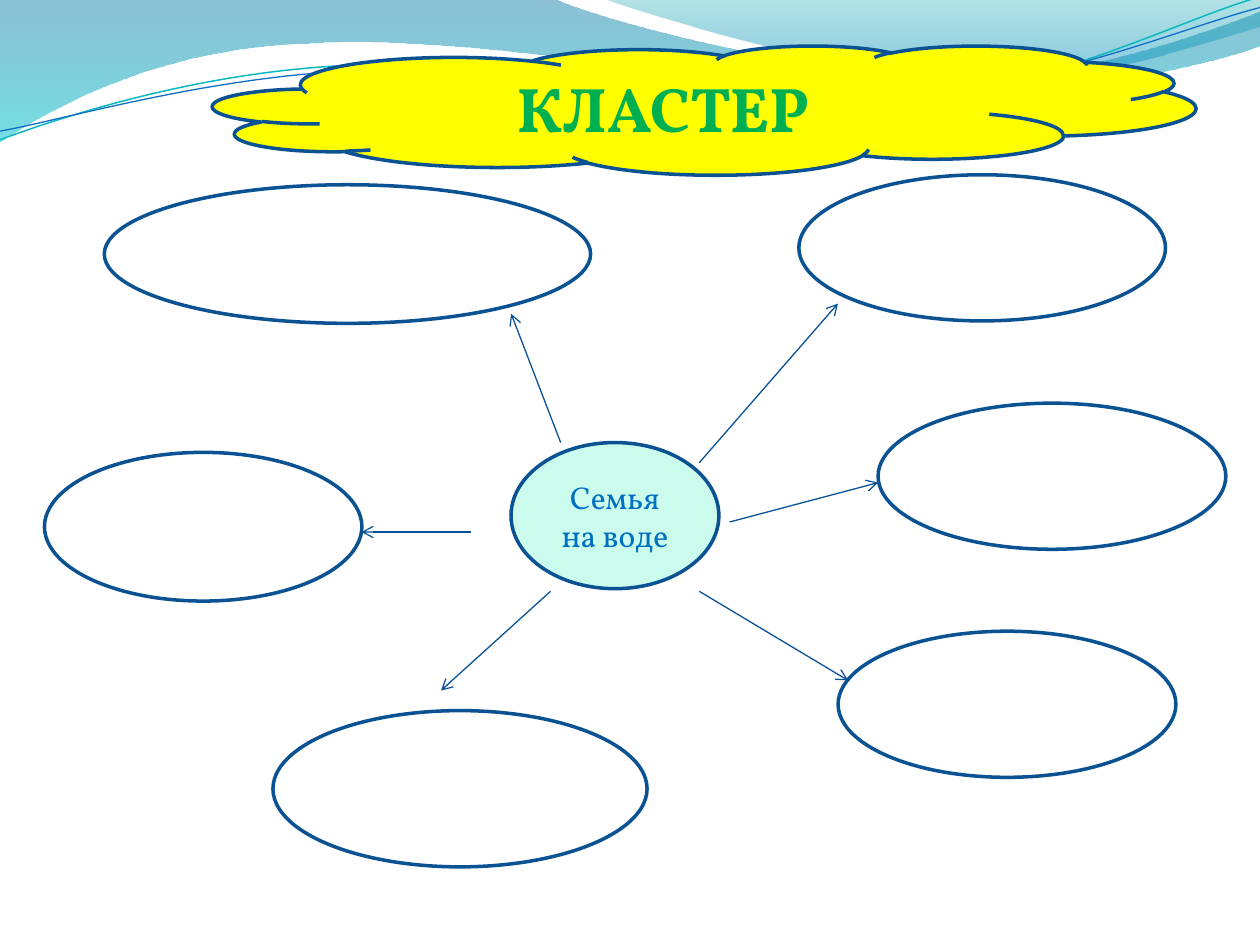
from lxml.etree import SubElement
from pptx import Presentation
from pptx.dml.color import RGBColor
from pptx.enum.shapes import MSO_CONNECTOR as CONN, MSO_SHAPE as SHAPE
from pptx.enum.text import MSO_ANCHOR as ANCHOR, PP_ALIGN as ALIGN
from pptx.oxml.ns import qn
from pptx.util import Pt

TOP_WAVE = [(0, 0), (316.8, -0.7),
            (342.7, 12.2, 478.1, 45.4, 545.8, 45.4),
            (614.2, 45.4, 689.8, 18.7, 720, 6.5), (720.7, 25.9),
            (707.8, 31.7, 626.4, 54.7, 537.1, 54),
            (447.8, 54, 275, 20.2, 185, 24.5),
            (92.9, 25.9, 33.1, 59.8, -0.7, 81.4), (0, 0)]
RIGHT_WAVE = [(344.9, -0.7),
              (366.5, 7.9, 491, 44.6, 553.7, 46.8),
              (616.3, 49.7, 691.9, 23, 720, 15.1), (720, 0), (344.9, -0.7)]
TEAL_CURVE = [(0, 79.9),
              (34.6, 67, 113.8, 41, 199.4, 37.4),
              (284.4, 33.8, 427, 64.1, 513.4, 57.6),
              (599.8, 51.1, 675.4, 10.8, 718.6, -1.4)]
BLUE_CURVE = [(0, 74.9),
              (33.8, 69.1, 118.1, 43.9, 203.8, 40.3),
              (290.2, 36.7, 429.8, 60.5, 516.2, 54),
              (601.9, 48.2, 677.5, 15.1, 720, 4.3)]
ARROWS = [(399.6, 337.9, 484.6, 388.8), (320.4, 252.9, 292.1, 179.3),
          (269.3, 304, 206.6, 304), (314.6, 337.9, 252, 394.6),
          (416.9, 298.3, 501.8, 275.8)]
BUBBLES = [(501.8, 230.4, 198.7, 83.5), (478.9, 360.7, 193, 83.5),
           (156, 406.1, 213.8, 89.3), (25.4, 258.5, 181.4, 85),
           (59.6, 105.6, 277.9, 79.2), (456.5, 99.9, 209.5, 83.5)]


def rgb(color):
    return RGBColor.from_string(color)


def add_path(s, path, close):
    points = [(Pt(x), Pt(y)) for seg in path for x, y in zip(seg[::2], seg[1::2])]
    builder = s.shapes.build_freeform(*points[0])
    builder.add_line_segments(points[1:], close=close)
    sp = builder.convert_to_shape()
    sp.shadow.inherit = False
    lines = iter(list(sp._element.iter(qn("a:lnTo"))))
    for seg in path[1:]:
        first = next(lines)
        if len(seg) == 6:
            curve = SubElement(first.getparent(), qn("a:cubicBezTo"))
            first.addprevious(curve)
            for line in (first, next(lines), next(lines)):
                curve.append(line[0])
                line.getparent().remove(line)
    return sp


def add_wave(s, path, *stops):
    sp = add_path(s, path, True)
    sp.line.fill.background()
    sp.fill.gradient()
    sp.fill.gradient_angle = 270
    for stop, (position, color, _) in zip(sp.fill.gradient_stops, stops):
        stop.position = position
        stop.color.rgb = rgb(color)
    for clr, (_, _, opacity) in zip(sp._element.spPr.iter(qn("a:srgbClr")), stops):
        SubElement(clr, qn("a:alpha"), val=str(opacity * 1000))


def add_curve(s, path, color, width):
    sp = add_path(s, path, False)
    sp.fill.background()
    sp.line.color.rgb = rgb(color)
    sp.line.width = Pt(width)


def add_outlined(s, kind, box, fill):
    sp = s.shapes.add_shape(kind, *map(Pt, box))
    sp.shadow.inherit = False
    sp.fill.solid()
    sp.fill.fore_color.rgb = rgb(fill)
    sp.line.color.rgb = rgb("0B5292")
    sp.line.width = Pt(2)
    return sp


def add_arrow(s, ends):
    c = s.shapes.add_connector(CONN.STRAIGHT, *map(Pt, ends))
    c.line.color.rgb = rgb("095295")
    c.line.width = Pt(0.75)
    spPr = c._element.spPr
    SubElement(spPr.find(qn("a:ln")), qn("a:tailEnd"), type="arrow")
    SubElement(spPr, qn("a:effectLst"))


def write(sp, text, size, color, bold=False):
    tf = sp.text_frame
    tf.word_wrap = True
    tf.vertical_anchor = ANCHOR.MIDDLE
    p = tf.paragraphs[0]
    p.alignment = ALIGN.CENTER
    r = p.add_run()
    r.text = text
    r.font.name = "Vollkorn"
    r.font.size = Pt(size)
    r.font.bold = bold
    r.font.color.rgb = rgb(color)


def main():
    prs = Presentation()
    prs.slide_width, prs.slide_height = Pt(720), Pt(540)
    s = prs.slides.add_slide(prs.slide_layouts[6])
    add_wave(s, TOP_WAVE, (0, "0074A1", 45), (1, "00C6CF", 55))
    add_wave(s, RIGHT_WAVE, (0, "00A1A9", 30), (0.8, "008BBF", 45))
    add_curve(s, TEAL_CURVE, "0AB8BF", 0.85)
    add_curve(s, BLUE_CURVE, "0F6FC6", 0.75)
    center = add_outlined(s, SHAPE.OVAL, (292, 252.9, 118.8, 83.5), "CAFBED")
    write(center, "Семья на воде", 18, "0070C0")
    add_arrow(s, (399.6, 264.4, 478.8, 173.5))
    cloud = add_outlined(s, SHAPE.CLOUD, (121.7, 26.1, 561.6, 73.8), "FFFF00")
    write(cloud, "КЛАСТЕР ", 36, "00B050", bold=True)
    for ends in ARROWS:
        add_arrow(s, ends)
    for box in BUBBLES:
        add_outlined(s, SHAPE.OVAL, box, "FFFFFF")
    prs.save("out.pptx")


if __name__ == "__main__":
    main()
